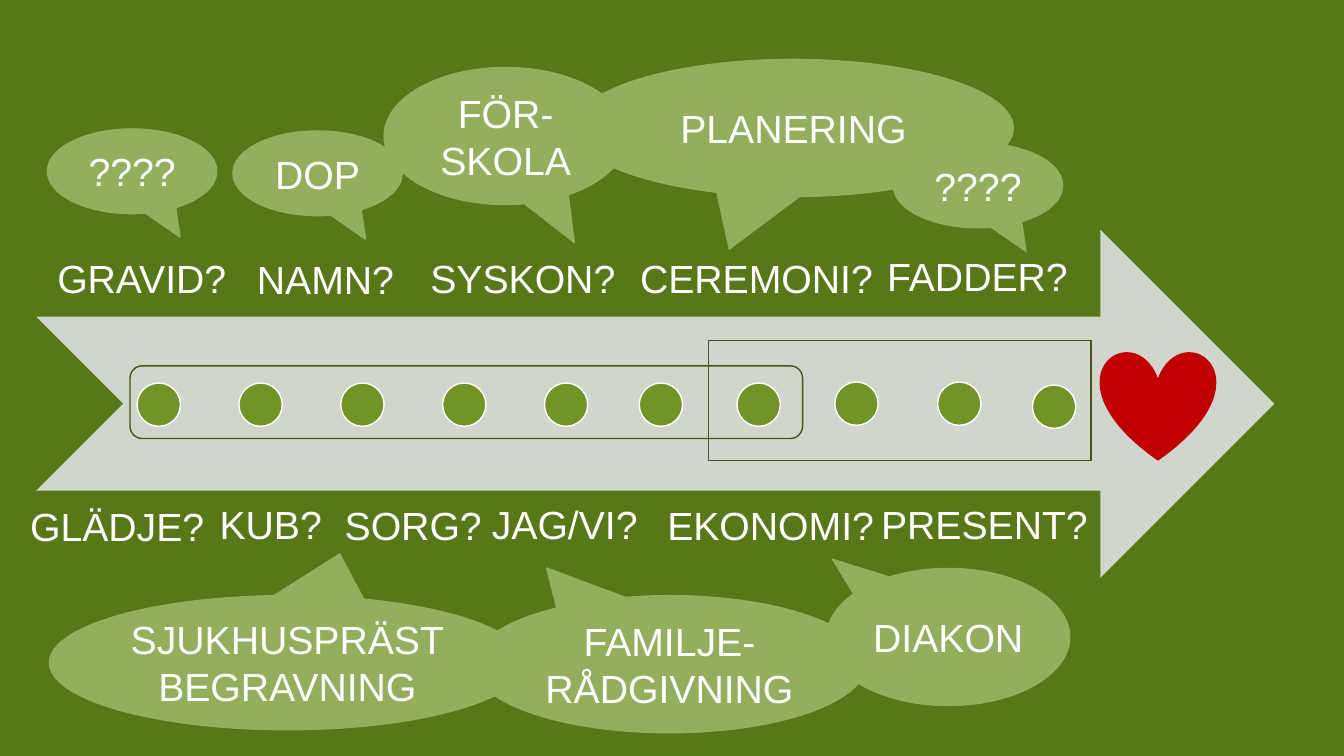
"""Build the slide with the arrow of questions and supporting contacts around a child."""
from dataclasses import dataclass

from pptx import Presentation
from pptx.dml.color import RGBColor as RGB
from pptx.enum.shapes import MSO_SHAPE as SHAPE
from pptx.enum.text import MSO_ANCHOR as ANCHOR, MSO_AUTO_SIZE as AUTO, PP_ALIGN as ALIGN
from pptx.util import Inches, Pt


@dataclass(frozen=True)
class Theme:
    background: RGB = RGB.from_string("567818")
    arrow: RGB = RGB.from_string("D1D6CC")
    dot: RGB = RGB.from_string("719427")
    callout: RGB = RGB.from_string("93AF5E")
    frame: RGB = RGB.from_string("405912")
    heart: RGB = RGB.from_string("C00000")
    text: RGB = RGB.from_string("FFFFFF")
    font: str = "Arial"
    size: Pt = Pt(28)
    line: Pt = Pt(1)


theme = Theme()


def write(tf, text, align=ALIGN.LEFT, anchor=ANCHOR.TOP, wrap=False, auto=AUTO.NONE):
    tf.text = text
    tf.word_wrap = wrap
    tf.auto_size = auto
    tf.vertical_anchor = anchor
    for p in tf.paragraphs:
        p.alignment = align
        for r in p.runs:
            r.font.name = theme.font
            r.font.size = theme.size
            r.font.color.rgb = theme.text


def add_figure(kind, box, fill=None, line=None):
    sp = s.shapes.add_shape(kind, *map(Inches, box))
    sp.shadow.inherit = False
    for part, color in ((sp.fill, fill), (sp.line.fill, line)):
        if color is None:
            part.background()
        else:
            part.solid()
            part.fore_color.rgb = color
    if line is not None:
        sp.line.width = theme.line
    return sp


prs = Presentation()
prs.slide_width = Inches(13.33)
prs.slide_height = Inches(7.5)
s = prs.slides.add_slide(prs.slide_layouts[6])
s.background.fill.solid()
s.background.fill.fore_color.rgb = theme.background

add_figure(SHAPE.NOTCHED_RIGHT_ARROW, (0.36, 2.28, 12.28, 3.45), fill=theme.arrow)

dots = [(1.36 + 1.01 * i, 3.8) for i in range(5)]
dots += [(6.34, 3.8), (7.31, 3.8), (8.28, 3.79), (9.3, 3.79), (10.24, 3.82)]
for left, top in dots:
    add_figure(SHAPE.OVAL, (left, top, 0.43, 0.43), fill=theme.dot, line=theme.text)

questions = [
    ("GRAVID?", 0.47, 2.47, 1.9),
    ("NAMN?", 2.45, 2.48, 1.58),
    ("SYSKON?", 4.17, 2.47, 2.05),
    ("CEREMONI?", 6.25, 2.47, 2.54),
    ("FADDER?", 8.7, 2.45, 2.01),
    ("GLÄDJE?", 0.2, 4.93, 1.95),
    ("KUB?", 2.08, 4.91, 1.23),
    ("SORG?", 3.32, 4.92, 1.58),
    ("JAG/VI?", 4.78, 4.91, 1.66),
    ("EKONOMI?", 6.52, 4.92, 2.27),
    ("PRESENT?", 8.64, 4.91, 2.27),
]
for text, left, top, width in questions:
    box = s.shapes.add_textbox(*map(Inches, (left, top, width, 0.57)))
    write(box.text_frame, text, auto=AUTO.SHAPE_TO_FIT_TEXT)

lower_right = (0.283, 0.777)
callouts = [
    ("????", (0.47, 1.28, 1.68, 0.84), lower_right),
    ("DOP", (2.31, 1.3, 1.68, 0.84), lower_right),
    ("FÖR-SKOLA", (3.81, 0.67, 2.41, 1.36), lower_right),
    ("PLANERING", (5.69, 0.59, 4.36, 1.36), (-0.146, 0.883)),
    ("????", (8.86, 1.42, 1.68, 0.84), lower_right),
    ("SJUKHUSPRÄST\nBEGRAVNING", (0.49, 5.91, 4.72, 1.33), (0.11, -0.811)),
    ("FAMILJE-RÅDGIVNING", (4.69, 5.91, 3.9, 1.36), (-0.312, -0.702)),
    ("DIAKON", (8.2, 5.64, 2.41, 1.36), (-0.476, -0.567)),
]
for text, box, tip in callouts:
    sp = add_figure(SHAPE.OVAL_CALLOUT, box, fill=theme.callout, line=theme.callout)
    sp.adjustments[0], sp.adjustments[1] = tip
    write(sp.text_frame, text, align=ALIGN.CENTER, anchor=ANCHOR.MIDDLE, wrap=True)

add_figure(SHAPE.HEART, (10.91, 3.48, 1.15, 1.09), fill=theme.heart)
add_figure(SHAPE.ROUNDED_RECTANGLE, (1.29, 3.63, 6.67, 0.72), line=theme.frame)
add_figure(SHAPE.RECTANGLE, (7.03, 3.38, 3.79, 1.19), line=theme.frame)

prs.save("out.pptx")
